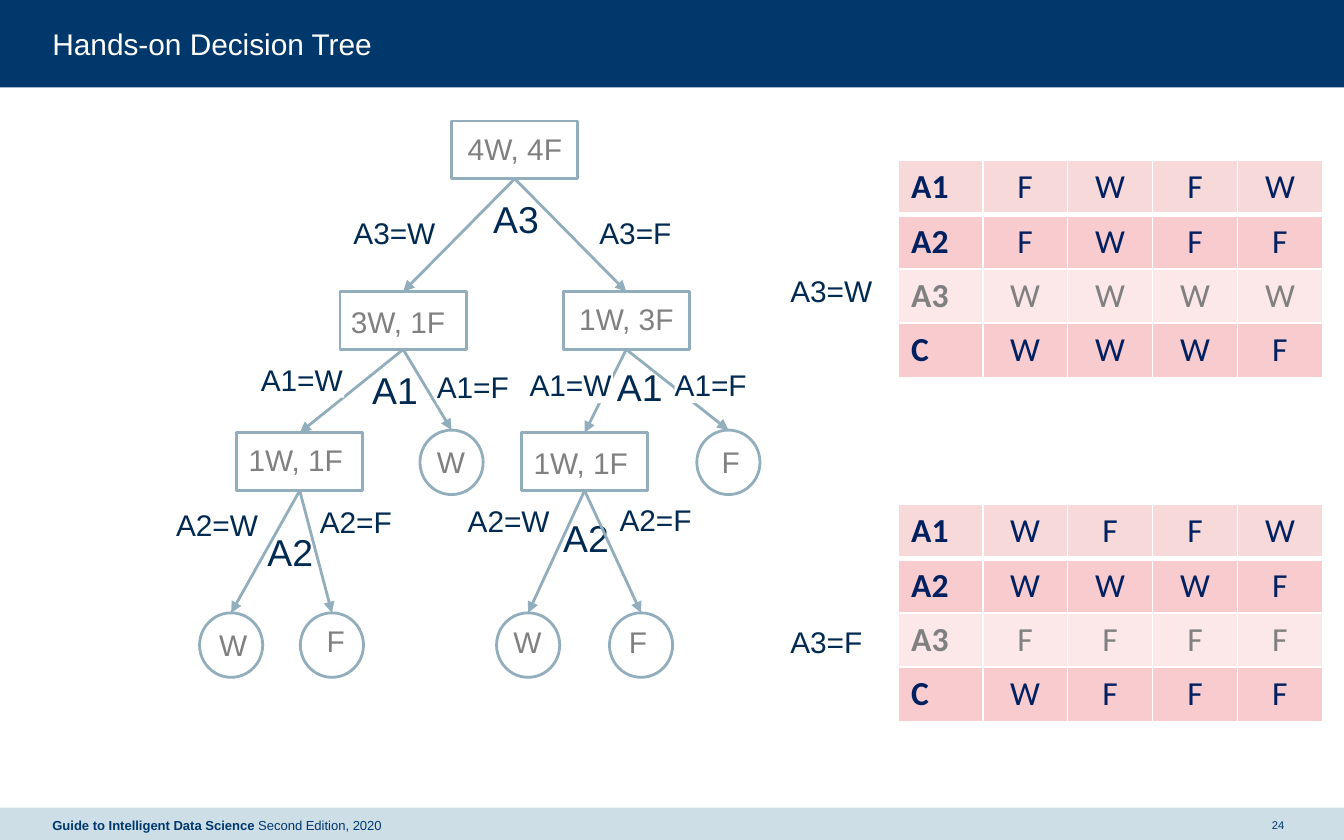
from pptx import Presentation
from pptx.dml.color import RGBColor
from pptx.enum.shapes import MSO_CONNECTOR, MSO_SHAPE
from pptx.enum.text import MSO_ANCHOR, MSO_AUTO_SIZE, PP_ALIGN
from pptx.oxml.ns import qn
from pptx.util import Inches, Pt
from lxml.etree import SubElement

NAVY = RGBColor(0x00, 0x38, 0x6C)
PALE_BLUE = RGBColor(0xCD, 0xDE, 0xE7)
STEEL = RGBColor(0x92, 0xAE, 0xBC)
INK = RGBColor(0x00, 0x2A, 0x51)
GRAY = RGBColor(0x80, 0x80, 0x80)
WHITE = RGBColor(0xFF, 0xFF, 0xFF)
TABLE_INK = RGBColor(0x00, 0x20, 0x60)
PINK = RGBColor(0xF8, 0xCC, 0xCF)
ROW_FILLS = [RGBColor(0xF8, 0xD9, 0xDA), PINK, RGBColor(0xFC, 0xE8, 0xE9), PINK]


def add_run(p, text, size, color, name="Arial", bold=False):
    r = p.add_run()
    r.text = text
    for key, value in {"name": name, "size": Pt(size), "bold": bold}.items():
        setattr(r.font, key, value)
    r.font.color.rgb = color


def add_text(x, y, w, h, runs, fill=None, **options):
    sp = slide.shapes.add_textbox(Inches(x), Inches(y), Inches(w), Inches(h))
    if fill is not None:
        sp.fill.solid()
        sp.fill.fore_color.rgb = fill
    tf = sp.text_frame
    margins = dict.fromkeys(["margin_left", "margin_top", "margin_right", "margin_bottom"], 0)
    for key, value in {**margins, **options}.items():
        setattr(tf, key, value)
    for run in runs:
        add_run(tf.paragraphs[0], *run)
    return tf


prs = Presentation()
prs.slide_width, prs.slide_height = Inches(10), Inches(6.25)
slide = prs.slides.add_slide(prs.slide_layouts[5])

for y, h, color in [(0, 0.65, NAVY), (6.01, 0.26, PALE_BLUE)]:
    sp = slide.shapes.add_shape(MSO_SHAPE.RECTANGLE, 0, Inches(y), prs.slide_width, Inches(min(h, 6.25 - y)))
    sp.shadow.inherit = False
    sp.fill.solid()
    sp.fill.fore_color.rgb = color
    sp.line.fill.background()

title = slide.shapes.title
slide.shapes._spTree.append(title._element)
bounds = {"left": 0.39, "top": 0.19, "width": 9.22, "height": 0.27}
for key, value in bounds.items():
    setattr(title, key, Inches(value))
tf = title.text_frame
title_format = {"margin_left": 0, "margin_top": 0, "margin_right": 0, "margin_bottom": 0,
                "vertical_anchor": MSO_ANCHOR.TOP, "word_wrap": True,
                "auto_size": MSO_AUTO_SIZE.SHAPE_TO_FIT_TEXT}
for key, value in title_format.items():
    setattr(tf, key, value)
tf.paragraphs[0].alignment = PP_ALIGN.LEFT
add_run(tf.paragraphs[0], "Hands-on Decision Tree", 16, WHITE)

footer = [("Guide to Intelligent Data Science ", 7, NAVY, "Arial", True),
          ("Second Edition, 2020", 7, NAVY)]
add_text(0.39, 6.01, 4.39, 0.26, footer, word_wrap=True, vertical_anchor=MSO_ANCHOR.MIDDLE)
tf = add_text(9.41, 6.01, 0.2, 0.26, [("24", 6, NAVY)], word_wrap=True,
              vertical_anchor=MSO_ANCHOR.MIDDLE)
tf.paragraphs[0].alignment = PP_ALIGN.CENTER

label_format = {"word_wrap": False, "auto_size": MSO_AUTO_SIZE.SHAPE_TO_FIT_TEXT}
splits = [("A2", 4.19, 3.83), ("A1", 4.59, 2.71), ("A2", 1.99, 3.94),
          ("A1", 2.77, 2.73), ("A3", 3.67, 1.46)]
for text, x, y in splits:
    add_text(x, y, 0.34, 0.34, [(text, 20, INK)], WHITE, **label_format)

BOX, LEAF = (MSO_SHAPE.RECTANGLE, 0.94, 0.43), (MSO_SHAPE.OVAL, 0.47, 0.48)
nodes = {
    "root": (BOX, 3.83, 0.9),
    "A3=W": (BOX, 3, 2.17), "A3=F": (BOX, 4.66, 2.17),
    "left A1=W": (BOX, 2.23, 3.22), "left A1=F": (LEAF, 3.36, 3.2),
    "right A1=W": (BOX, 4.35, 3.22), "right A1=F": (LEAF, 5.42, 3.2),
    "left A2=W": (LEAF, 1.72, 4.56), "left A2=F": (LEAF, 2.47, 4.56),
    "right A2=W": (LEAF, 3.93, 4.56), "right A2=F": (LEAF, 4.77, 4.56),
}
for (kind, w, h), center, top in nodes.values():
    sp = slide.shapes.add_shape(kind, Inches(center - w / 2), Inches(top), Inches(w), Inches(h))
    sp.shadow.inherit = False
    sp.fill.background()
    sp.line.color.rgb = STEEL
    sp.line.width = Pt(1.5)

branches = {"root": ["A3=W", "A3=F"],
            "A3=W": ["left A1=W", "left A1=F"], "A3=F": ["right A1=W", "right A1=F"],
            "left A1=W": ["left A2=W", "left A2=F"], "right A1=W": ["right A2=W", "right A2=F"]}
for parent, children in branches.items():
    (_, _, h), x, y = nodes[parent]
    for child in children:
        _, child_x, child_y = nodes[child]
        arrow = slide.shapes.add_connector(MSO_CONNECTOR.STRAIGHT, Inches(x), Inches(y + h),
                                           Inches(child_x), Inches(child_y))
        arrow.line.color.rgb = STEEL
        arrow.line.width = Pt(1.5)
        SubElement(arrow.line._get_or_add_ln(), qn("a:tailEnd"), type="triangle")
        SubElement(arrow._element.spPr, qn("a:effectLst"))

counts = [("4W, 4F", 3.48, 0.97), ("3W, 1F", 2.61, 2.26), ("1W, 3F", 4.31, 2.24),
          ("1W, 1F", 1.85, 3.29), ("1W, 1F", 3.97, 3.31),
          ("W", 3.25, 3.3), ("F", 5.37, 3.3), ("W", 1.63, 4.66), ("F", 2.43, 4.63),
          ("W", 3.82, 4.64), ("F", 4.68, 4.64)]
conditions = [("A3=W", 2.63, 1.6), ("A3=F", 4.46, 1.6), ("A1=W", 1.94, 2.69), ("A1=F", 3.25, 2.74),
              ("A1=W", 3.94, 2.73), ("A1=F", 5.02, 2.73), ("A2=W", 1.31, 3.77), ("A2=F", 2.38, 3.75),
              ("A2=W", 3.48, 3.74), ("A2=F", 4.61, 3.73), ("A3=F", 5.88, 4.64), ("A3=W", 5.88, 2.03)]
widths = {"W": 0.21, "F": 0.14}
for labels, color in [(counts, GRAY), (conditions, INK)]:
    for text, x, y in labels:
        w = 0.71 if "," in text else widths[text[-1]] + 0.41 * ("=" in text)
        add_text(x, y, w, 0.27, [(text, 16, color)], WHITE, **label_format)

tables = [(1.19, ["FWFW", "FWFF", "WWWW", "WWWF"]),
          (3.75, ["WFFW", "WWWF", "FFFF", "WFFF"])]
for top, rows in tables:
    table = slide.shapes.add_table(4, 5, Inches(6.68), Inches(top), Inches(3.16), Inches(1.62)).table
    for i, (name, values) in enumerate(zip(["A1", "A2", "A3", "C"], rows)):
        for j, text in enumerate([name, *values]):
            cell = table.cell(i, j)
            p = cell.text_frame.paragraphs[0]
            p.alignment = PP_ALIGN.CENTER if j else PP_ALIGN.LEFT
            add_run(p, text, 18, GRAY if name == "A3" else TABLE_INK, "Calibri", j == 0)
            tcPr = cell._tc.get_or_add_tcPr()
            for side in "LRTB":
                thick = (i, side) in [(0, "B"), (1, "T")]
                ln = SubElement(tcPr, qn(f"a:ln{side}"), w=str(Pt(3 if thick else 1)))
                SubElement(SubElement(ln, qn("a:solidFill")), qn("a:srgbClr"), val=str(WHITE))
            cell.fill.solid()
            cell.fill.fore_color.rgb = ROW_FILLS[i]

prs.save("out.pptx")
